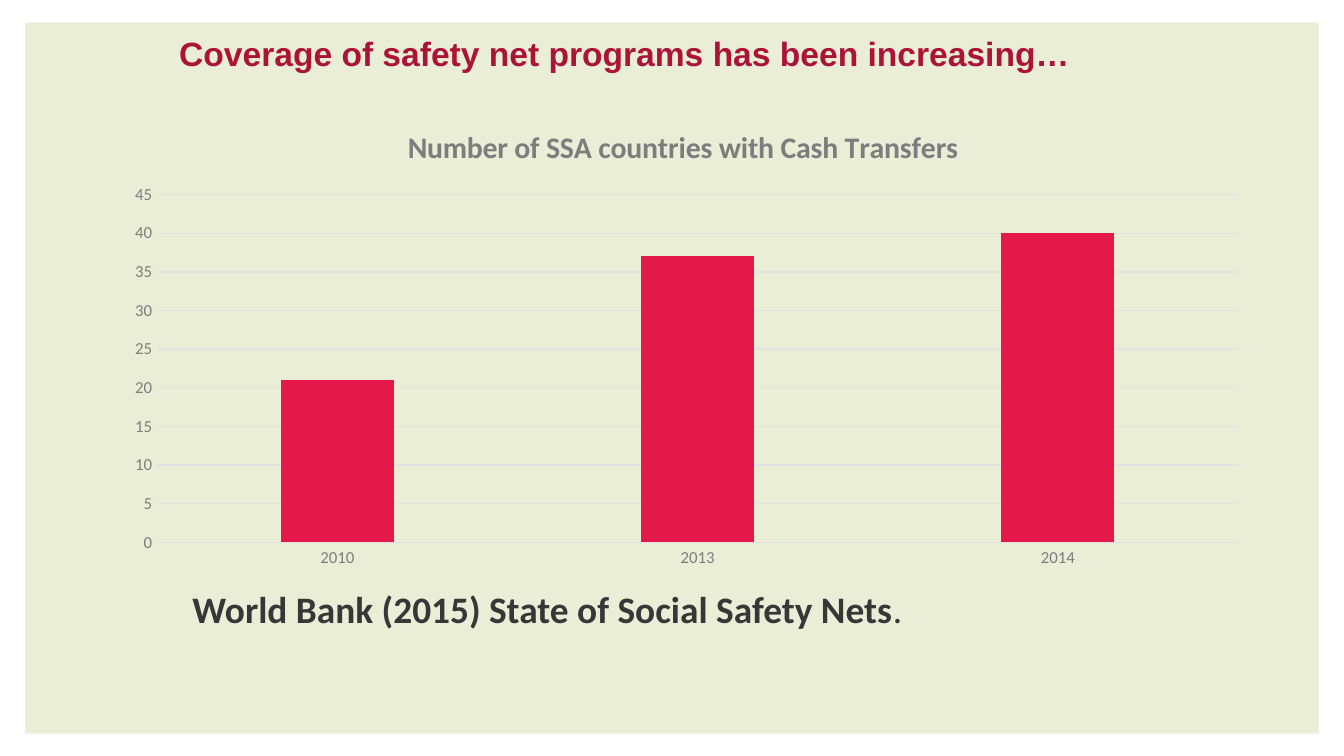
"""Build a slide with a column chart of cash transfer coverage."""
from pptx import Presentation
from pptx.chart.data import CategoryChartData
from pptx.dml.color import RGBColor
from pptx.enum.chart import XL_CHART_TYPE, XL_TICK_MARK
from pptx.enum.shapes import MSO_SHAPE
from pptx.enum.text import MSO_ANCHOR
from pptx.util import Pt

RECT = MSO_SHAPE.RECTANGLE
COLUMN = XL_CHART_TYPE.COLUMN_CLUSTERED
NO_TICK = XL_TICK_MARK.NONE
TOP = MSO_ANCHOR.TOP
WIDE, HIGH = 720, 405
SIDE, EDGE = 13.5, 12
COLORS = {
    "panel": "EBEED7", "frame": "FFFFFF", "title": "AB1337",
    "text": "373737", "label": "7D7D7D", "grid": "E1E1E1", "bar": "E41949",
}


def color(name):
    return RGBColor.from_string(COLORS[name])


def style(font, face, size, name, bold=False):
    font.name, font.size, font.bold = face, Pt(size), bold
    font.color.rgb = color(name)


deck = Presentation()
deck.slide_width, deck.slide_height = Pt(WIDE), Pt(HIGH)
slide = deck.slides.add_slide(deck.slide_layouts[6])
shapes = slide.shapes

for name, *box in [
    ("panel", 0, 0, WIDE, HIGH),
    ("frame", 0, 0, SIDE, HIGH),
    ("frame", WIDE - SIDE, 0, SIDE, HIGH),
    ("frame", 0, 0, WIDE, EDGE),
    ("frame", 0, HIGH - EDGE, WIDE, EDGE),
]:
    rect = shapes.add_shape(RECT, *map(Pt, box))
    rect.shadow.inherit = False
    rect.fill.solid()
    rect.fill.fore_color.rgb = color(name)
    rect.line.fill.background()

title = shapes.add_textbox(Pt(96), Pt(17.5), Pt(624), Pt(39)).text_frame
title.word_wrap = True
title.vertical_anchor = TOP
title.margin_left = title.margin_top = title.margin_bottom = 0
title.text = "Coverage of safety net programs has been increasing…"
style(title.paragraphs[0].runs[0].font, "Arial", 18, "title", True)

source = shapes.add_textbox(Pt(96), Pt(310.5), Pt(397.5), Pt(31.5)).text_frame
source.word_wrap = False
line = source.paragraphs[0]
for text, bold in [("World Bank (2015) State of Social Safety Nets", True), (".", False)]:
    run = line.add_run()
    run.text = text
    style(run.font, "Calibri", 20, "text", bold)

data = CategoryChartData()
data.categories = ["2010", "2013", "2014"]
data.add_series("Series 1", (21, 37, 40))
frame = shapes.add_chart(COLUMN, Pt(60), Pt(56), Pt(615.5), Pt(253), data)
chart = frame.chart
style(chart.font, "Calibri", 10, "text")
chart.has_legend = False
chart.has_title = True
head = chart.chart_title.text_frame
head.text = "Number of SSA countries with Cash Transfers "
style(head.paragraphs[0].runs[0].font, "Calibri", 16, "label", True)

plot = chart.plots[0]
plot.gap_width, plot.overlap = 219, -27
plot.vary_by_categories = False
bars = plot.series[0].format.fill
bars.solid()
bars.fore_color.rgb = color("bar")

years, count = chart.category_axis, chart.value_axis
for axis in (years, count):
    axis.major_tick_mark = axis.minor_tick_mark = NO_TICK
    style(axis.tick_labels.font, "Calibri", 9, "label")
count.minimum_scale, count.maximum_scale, count.major_unit = 0, 45, 5
count.format.line.fill.background()
count.has_major_gridlines = True
for rule in (years.format.line, count.major_gridlines.format.line):
    rule.color.rgb = color("grid")
    rule.width = Pt(0.75)

deck.save("out.pptx")
